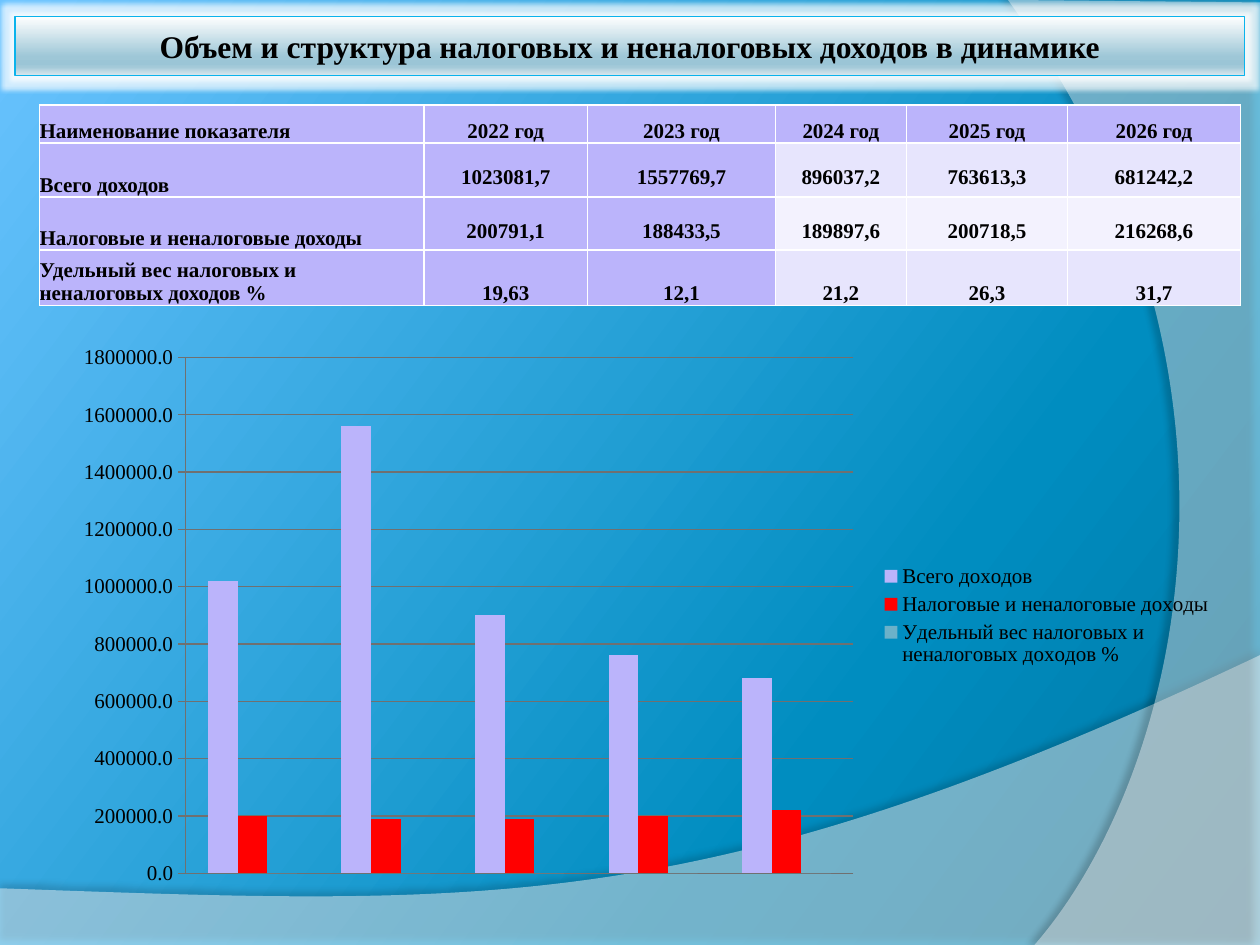
from lxml import etree
from pptx import Presentation
from pptx import util as u
from pptx.chart.data import CategoryChartData
from pptx.dml.color import RGBColor
from pptx.enum import chart as charts, shapes, text
from pptx.oxml import parse_xml
from pptx.oxml.ns import nsdecls, qn

BLACK = RGBColor(0x00, 0x00, 0x00)
WHITE = RGBColor(0xFF, 0xFF, 0xFF)
CYAN = RGBColor(0x0A, 0xB3, 0xEC)
LILAC = RGBColor(0xBB, 0xB4, 0xFB)
PALE = RGBColor(0xE7, 0xE5, 0xFD)
PALEST = RGBColor(0xF3, 0xF2, 0xFE)
RED = RGBColor(0xFF, 0x00, 0x00)
TEAL = RGBColor(0x6B, 0xB1, 0xC9)
GRAY = RGBColor(0x70, 0x70, 0x70)
DEEP = RGBColor(0x00, 0x76, 0xA1)
OCEAN = RGBColor(0x00, 0x8D, 0xC0)
SKY = RGBColor(0x6A, 0xC3, 0xFF)
STEEL = RGBColor(0x9E, 0xC7, 0xD7)
STEEL_DARK = RGBColor(0x9B, 0xC5, 0xD6)
STEEL_LIGHT = RGBColor(0xA5, 0xCA, 0xD9)
MIST = RGBColor(0xDA, 0xE8, 0xEE)

YEARS = [f"{year} год" for year in range(2022, 2027)]
INDICATORS = {
    "Всего доходов": ["1023081,7", "1557769,7", "896037,2", "763613,3", "681242,2"],
    "Налоговые и неналоговые доходы": ["200791,1", "188433,5", "189897,6", "200718,5", "216268,6"],
    "Удельный вес налоговых и неналоговых доходов %": ["19,63", "12,1", "21,2", "26,3", "31,7"],
}


def write(frame, content, size=12, bold=True, align=text.PP_ALIGN.CENTER, font="Times New Roman"):
    paragraph = frame.paragraphs[0]
    paragraph.alignment = align
    run = paragraph.add_run()
    run.text = content
    run.font.name = font
    run.font.size = u.Pt(size)
    run.font.bold = bold
    run.font.color.rgb = BLACK


def set_gradient(fill, stops, angle):
    fill.gradient()
    gradient = fill._fill._gradFill
    stop_list = gradient.find(qn("a:gsLst"))
    stop_list.clear()
    for position, color in stops:
        stop = etree.SubElement(stop_list, qn("a:gs"), pos=str(position * 1000))
        etree.SubElement(stop, qn("a:srgbClr"), val=str(color))
    gradient.find(qn("a:lin")).set("ang", str(angle * 60000))


def add_effect(shape, effect):
    shape._element.spPr.append(parse_xml(f"<a:effectLst {nsdecls('a')}>{effect}</a:effectLst>"))


def curve_last_three(shape):
    lines = list(shape._element.iter(qn("a:lnTo")))[-3:]
    curve = parse_xml(f"<a:cubicBezTo {nsdecls('a')}/>")
    lines[0].addprevious(curve)
    for line in lines:
        curve.append(line[0])
        line.getparent().remove(line)


def set_layout(element, x, y, width, height, inner=False):
    for previous in element.findall(qn("c:layout")):
        element.remove(previous)
    target = '<c:layoutTarget val="inner"/>' if inner else ""
    values = "".join(f'<c:{tag} val="{value}"/>' for tag, value in zip("xywh", (x, y, width, height)))
    layout = parse_xml(f'<c:layout {nsdecls("c")}><c:manualLayout>{target}<c:xMode val="edge"/>'
                       f'<c:yMode val="edge"/>{values}</c:manualLayout></c:layout>')
    position = element.find(qn("c:legendPos"))
    if position is None:
        element.insert(0, layout)
    else:
        position.addnext(layout)


class Board:
    COLUMNS, ROWS = 100, 75

    def __init__(self, presentation):
        self.slide = presentation.slides.add_slide(presentation.slide_layouts[6])
        self.column = presentation.slide_width / self.COLUMNS
        self.row = presentation.slide_height / self.ROWS

    def box(self, left, top, width, height):
        return (round(left * self.column), round(top * self.row),
                round(width * self.column), round(height * self.row))

    def background(self, stops, angle):
        set_gradient(self.slide.background.fill, stops, angle)

    def wave(self, points, opacity, shadow_opacity, distance, direction):
        scaled = [(round(x * self.column), round(y * self.row)) for x, y in points]
        builder = self.slide.shapes.build_freeform(*scaled[0])
        builder.add_line_segments(scaled[1:], close=False)
        shape = builder.convert_to_shape()
        curve_last_three(shape)
        shape.fill.solid()
        shape.fill.fore_color.rgb = WHITE
        color = shape._element.spPr.find(qn("a:solidFill"))[0]
        etree.SubElement(color, qn("a:alpha"), val=str(opacity * 1000))
        shape.line.fill.background()
        add_effect(shape, f'<a:outerShdw blurRad="{u.Pt(4)}" dist="{u.Pt(distance)}" dir="{direction * 60000}">'
                          f'<a:srgbClr val="{BLACK}"><a:alpha val="{shadow_opacity * 1000}"/></a:srgbClr>'
                          '</a:outerShdw>')

    def banner(self, content, area, stops):
        shape = self.slide.shapes.add_shape(shapes.MSO_SHAPE.RECTANGLE, *self.box(*area))
        set_gradient(shape.fill, stops, 90)
        shape.line.color.rgb = CYAN
        shape.line.width = u.Pt(0.75)
        add_effect(shape, f'<a:glow rad="{u.Pt(5)}"><a:srgbClr val="{WHITE}">'
                          '<a:alpha val="70000"/></a:srgbClr></a:glow>')
        shape.text_frame.vertical_anchor = text.MSO_ANCHOR.MIDDLE
        write(shape.text_frame, content, size=18)

    def table(self, rows, area, widths, heights, row_fills):
        table = self.slide.shapes.add_table(len(rows), len(widths), *self.box(*area)).table
        for column, width in zip(table.columns, widths):
            column.width = round(width * self.column)
        for index, (row, height) in enumerate(zip(table.rows, heights)):
            row.height = round(height * self.row)
            for place, (cell, content) in enumerate(zip(row.cells, rows[index])):
                self.cell(cell, content, LILAC if place < 3 else row_fills[index],
                          lowered=index in (1, 2) and place > 0, heading=place == 0)

    def cell(self, cell, content, fill, lowered, heading):
        cell.margin_left = cell.margin_right = cell.margin_bottom = 0
        cell.margin_top = round(1.83 * self.row) if lowered else 0
        cell.vertical_anchor = text.MSO_ANCHOR.TOP if lowered else text.MSO_ANCHOR.BOTTOM
        write(cell.text_frame, content, align=text.PP_ALIGN.LEFT if heading else text.PP_ALIGN.CENTER)
        properties = cell._tc.get_or_add_tcPr()
        for side in "LRTB":
            properties.append(parse_xml(
                f'<a:ln{side} {nsdecls("a")} w="{u.Pt(1)}"><a:solidFill>'
                f'<a:srgbClr val="{WHITE}"/></a:solidFill></a:ln{side}>'))
        cell.fill.solid()
        cell.fill.fore_color.rgb = fill

    def column_chart(self, categories, series, area, colors):
        data = CategoryChartData(number_format="0.0")
        data.categories = categories
        for name, values in series.items():
            data.add_series(name, [round(float(value.replace(",", ".")), -4) for value in values])
        chart = self.slide.shapes.add_chart(
            charts.XL_CHART_TYPE.COLUMN_CLUSTERED, *self.box(*area), data).chart
        chart.has_title = False
        chart.font.name = "Times New Roman"
        chart.font.size = u.Pt(12)
        chart.font.color.rgb = BLACK
        plot = chart.plots[0]
        plot.gap_width = 150
        plot.overlap = 0
        plot.vary_by_categories = False
        for item, color in zip(plot.series, colors):
            item.format.fill.solid()
            item.format.fill.fore_color.rgb = color
        chart.category_axis.visible = False
        axis = chart.value_axis
        axis.minimum_scale, axis.maximum_scale, axis.major_unit = 0, 1800000, 200000
        axis.major_tick_mark = charts.XL_TICK_MARK.CROSS
        axis.tick_labels.number_format = "0.0"
        axis.tick_labels.number_format_is_linked = False
        for line in (axis.format.line, axis.major_gridlines.format.line):
            line.color.rgb = GRAY
            line.width = u.Pt(0.75)
        chart.has_legend = True
        chart.legend.position = charts.XL_LEGEND_POSITION.RIGHT
        chart.legend.include_in_layout = False
        set_layout(chart._chartSpace.chart.plotArea, 0.11, 0.04, 0.57, 0.92, inner=True)
        set_layout(chart.legend._element, 0.7, 0.4, 0.29, 0.2)


def main():
    presentation = Presentation()
    presentation.slide_width = u.Inches(10)
    presentation.slide_height = u.Inches(7.5)
    board = Board(presentation)
    board.background([(0, DEEP), (30, OCEAN), (100, SKY)], 217)
    board.wave([(0, 70.5), (0, 75), (100, 75), (100, 52),
                (55.9, 72.9), (39.1, 71.9), (0, 70.5)], 45, 35, 3.5, 270)
    board.wave([(80, 0), (100, 0.2), (100, 75), (82.1, 75),
                (93.5, 61.9), (101.8, 30), (80, 0)], 40, 45, 4, 180)
    board.banner("Объем и структура налоговых и неналоговых доходов в динамике", (1.2, 1.3, 97.6, 4.7),
                 [(0, WHITE), (68, STEEL), (81, STEEL_DARK), (86, STEEL_LIGHT), (100, MIST)])
    rows = [["Наименование показателя", *YEARS]] + [[name, *values] for name, values in INDICATORS.items()]
    board.table(rows, (3.14, 8.35, 95.3, 15.8), (30.5, 13, 14.9, 10.4, 12.8, 13.7),
                (3, 4.3, 4.2, 4.4), (LILAC, PALE, PALEST, PALE))
    board.column_chart(YEARS, INDICATORS, (4.5, 26.6, 93, 44.5), (LILAC, RED, TEAL))
    presentation.save("out.pptx")


if __name__ == "__main__":
    main()
